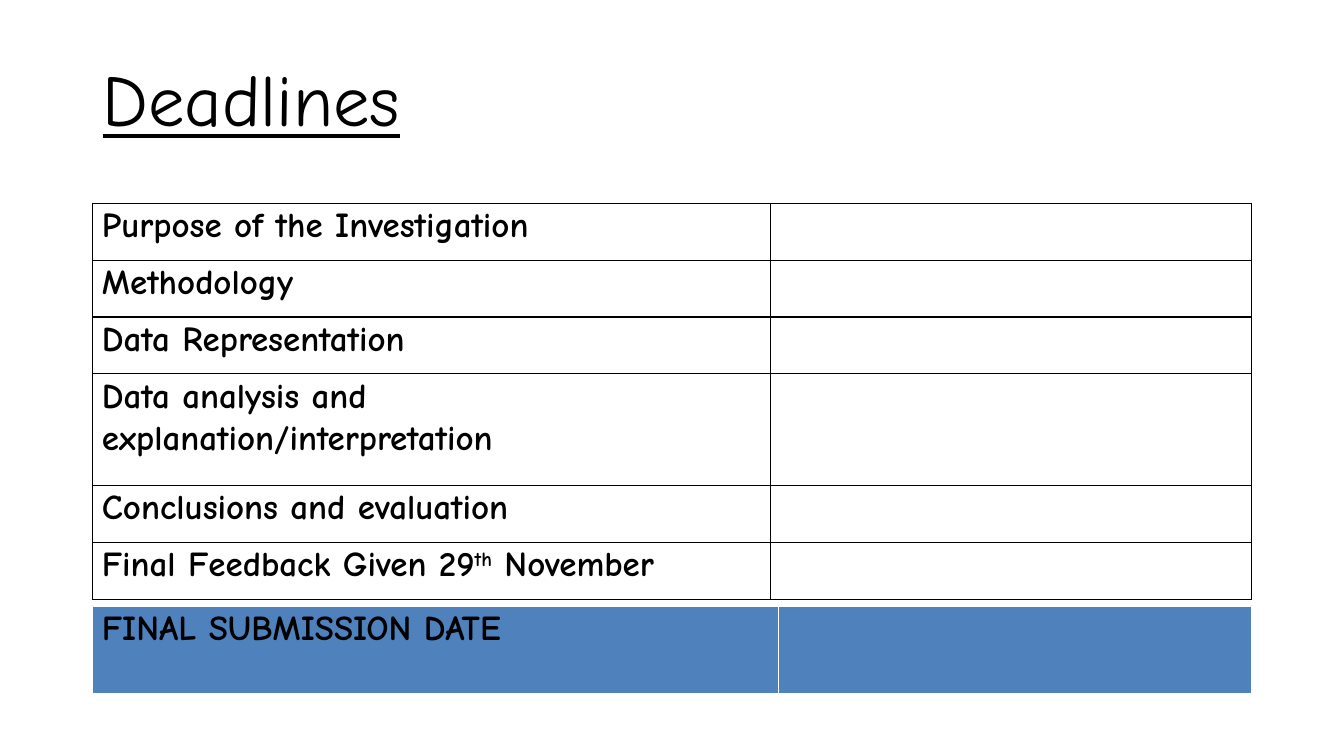
from lxml.etree import SubElement
from pptx import Presentation
from pptx.dml.color import RGBColor
from pptx.enum.text import MSO_ANCHOR, MSO_AUTO_SIZE, PP_ALIGN
from pptx.oxml.ns import qn
from pptx.util import Cm, Pt

BLACK = RGBColor(0x00, 0x00, 0x00)
WHITE = RGBColor(0xFF, 0xFF, 0xFF)
BLUE = RGBColor(0x4F, 0x81, 0xBD)
FACE = "Comic Neue"
HEAD = {"name": FACE, "size": Pt(52), "bold": False, "underline": True}
BODY = {"name": FACE, "size": Pt(25), "bold": True}
LEFT, WIDTH = 2.33, 29.2
TASKS = [
    ["Purpose of the Investigation"],
    ["Methodology"],
    ["Data Representation"],
    ["Data analysis and explanation/interpretation"],
    ["Conclusions and evaluation"],
    ["Final Feedback Given 29", "th", " November"],
]
FINAL = [["FINAL SUBMISSION DATE"]]


def style(font, look):
    """Apply a dict of format values and black colour to a font."""
    for key, value in look.items():
        setattr(font, key, value)
    font.color.rgb = BLACK


def add_title(slide, text):
    """Fill and place the title placeholder."""
    title = slide.shapes.title
    place = {"left": LEFT, "top": 0.51, "width": WIDTH, "height": 4.19}
    for key, value in place.items():
        setattr(title, key, Cm(value))
    frame = title.text_frame
    frame.auto_size = MSO_AUTO_SIZE.NONE
    frame.vertical_anchor = MSO_ANCHOR.MIDDLE
    para = frame.paragraphs[0]
    para.alignment = PP_ALIGN.LEFT
    para.line_spacing = 0.9
    run = para.add_run()
    run.text = text
    style(run.font, HEAD)


def add_edges(cell, color, widths):
    """Draw the left, right, top and bottom borders of a cell."""
    props = cell._tc.get_or_add_tcPr()
    for side, width in zip("LRTB", widths):
        line = SubElement(props, qn(f"a:ln{side}"), w=str(Pt(width)))
        fill = SubElement(line, qn("a:solidFill"))
        SubElement(fill, qn("a:srgbClr"), val=str(color))


def add_text(cell, parts):
    """Write text parts in a cell, every second one raised."""
    para = cell.text_frame.paragraphs[0]
    para.line_spacing = 1.07
    for index, part in enumerate(parts):
        run = para.add_run()
        run.text = part
        style(run.font, BODY)
        if index % 2:
            run._r.get_or_add_rPr().set("baseline", "30000")


def add_grid(slide, top, cols, rows, texts, edge, widths, fill=None):
    """Add a table with labels in the first column."""
    frame = slide.shapes.add_table(
        len(rows), len(cols), Cm(LEFT), Cm(top), Cm(WIDTH), Cm(sum(rows)))
    table = frame.table
    table.first_row = table.horz_banding = False
    for col, width in zip(table.columns, cols):
        col.width = Cm(width)
    for row, height, parts in zip(table.rows, rows, texts):
        row.height = Cm(height)
        for cell in row.cells:
            cell.margin_left = cell.margin_right = Cm(0.24)
            cell.margin_top = cell.margin_bottom = 0
            add_edges(cell, edge, widths)
            if fill is None:
                cell.fill.background()
            else:
                cell.fill.solid()
                cell.fill.fore_color.rgb = fill
        add_text(row.cells[0], parts)


def main():
    """Build and save the slide."""
    deck = Presentation()
    deck.slide_width, deck.slide_height = Cm(33.87), Cm(19.05)
    slide = deck.slides.add_slide(deck.slide_layouts[5])
    rows = [2.82 if i == 3 else 1.43 for i in range(len(TASKS))]
    add_grid(slide, 5.13, [17.08, 12.12], rows, TASKS, BLACK, [1] * 4)
    add_grid(slide, 15.27, [17.29, 11.91], [2.23], FINAL, WHITE,
             [1, 1, 1, 3], BLUE)
    add_title(slide, "Deadlines")
    deck.save("out.pptx")


if __name__ == "__main__":
    main()
